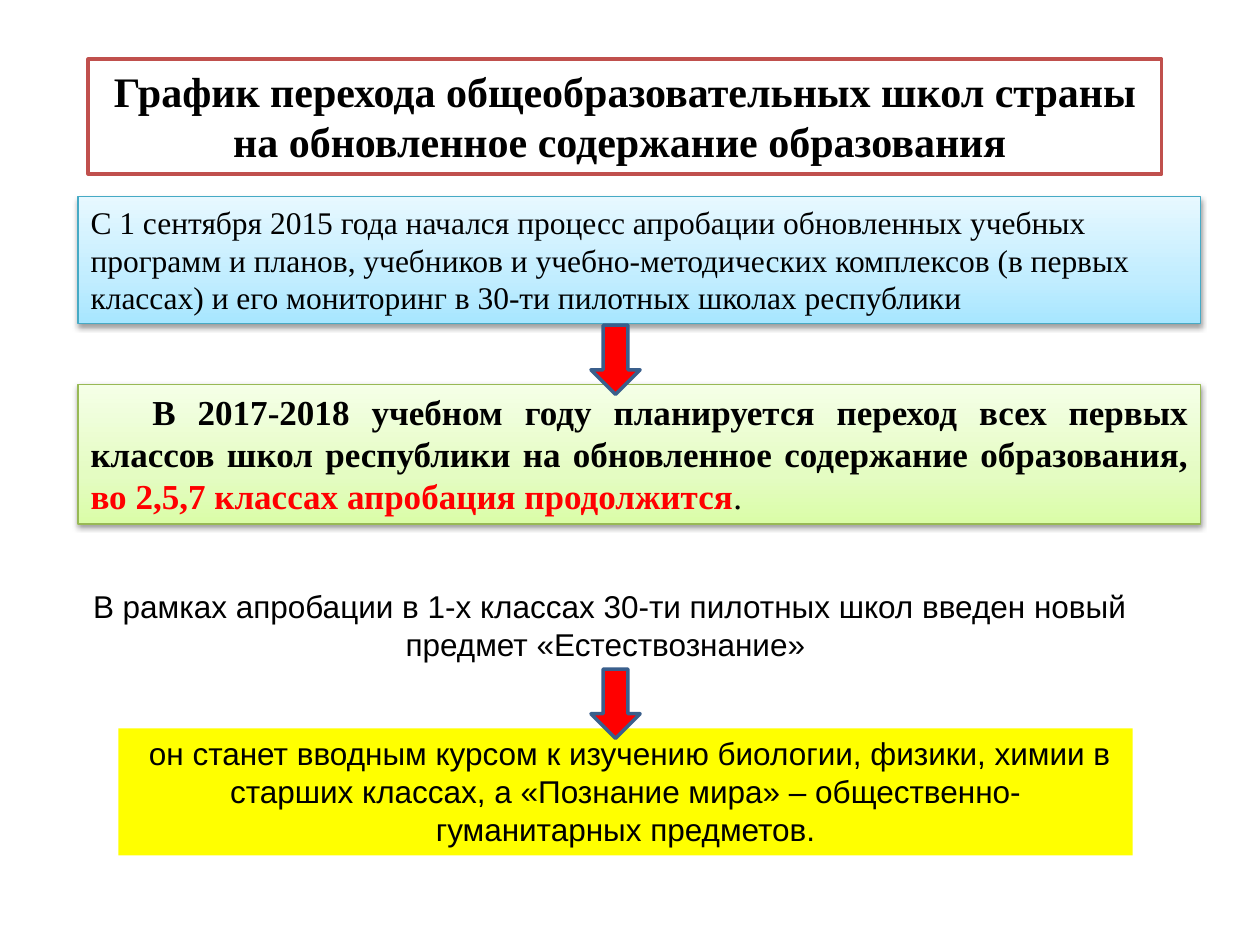
from copy import deepcopy

from pptx import Presentation
from pptx import util as u
from pptx.dml.color import RGBColor
from pptx.enum import shapes, text
from pptx.oxml import parse_xml
from pptx.oxml.ns import nsdecls, qn

BLACK = RGBColor(0x00, 0x00, 0x00)
WHITE = RGBColor(0xFF, 0xFF, 0xFF)
RED = RGBColor(0xFF, 0x00, 0x00)
YELLOW = RGBColor(0xFF, 0xFF, 0x00)
BRICK = RGBColor(0xC0, 0x50, 0x4D)
NAVY = RGBColor(0x3A, 0x5F, 0x8C)
AQUA = RGBColor(0x46, 0xAA, 0xC5)
OLIVE = RGBColor(0x98, 0xB9, 0x55)
BLUES = [RGBColor.from_string(c) for c in ("A7E6FF", "C1EDFF", "E7F8FF")]
GREENS = [RGBColor.from_string(c) for c in ("DAFDA7", "E4FCC2", "F5FFE7")]

SERIF = {"name": "Times New Roman", "size": u.Pt(18), "bold": False}
SANS = {**SERIF, "name": "Arial"}
HEAD = {**SERIF, "size": u.Pt(24), "bold": True}
STRONG = {**SERIF, "size": u.Pt(20), "bold": True}
FRAME = {"word_wrap": True, "auto_size": text.MSO_AUTO_SIZE.SHAPE_TO_FIT_TEXT,
         "vertical_anchor": text.MSO_ANCHOR.TOP}
LEFT, MID, JUST = text.PP_ALIGN.LEFT, text.PP_ALIGN.CENTER, text.PP_ALIGN.JUSTIFY

SHADOW = (f'<a:outerShdw {nsdecls("a")} blurRad="40000" dist="20000" dir="5400000" '
          'rotWithShape="0"><a:srgbClr val="000000"><a:alpha val="38000"/>'
          '</a:srgbClr></a:outerShdw>')


def apply(target, values):
    for key, value in values.items():
        setattr(target, key, value)


class Deck:
    def __init__(self):
        self.prs = Presentation()
        self.prs.slide_width, self.prs.slide_height = u.Inches(10), u.Inches(7.5)
        self.slide = self.prs.slides.add_slide(self.prs.slide_layouts[5])

    def paint(self, shape, fill, line=None, width=2):
        shape.fill.solid()
        shape.fill.fore_color.rgb = fill
        self.edge(shape, line, width)

    def edge(self, shape, line, width):
        if line is None:
            shape.line.fill.background()
        else:
            shape.line.color.rgb = line
            shape.line.width = u.Pt(width)

    def label(self, shape, runs, font, align=MID, indent=0):
        """Fill the shape with one paragraph of (wording, format) runs."""
        frame = shape.text_frame
        apply(frame, FRAME)
        para = frame.paragraphs[0]
        para.alignment = align
        if indent:
            para._p.get_or_add_pPr().set("indent", str(u.Inches(indent)))
        for words, extra in runs:
            look = {**font, **extra}
            tint = look.pop("color", BLACK)
            run = para.add_run()
            run.text = words
            apply(run.font, look)
            run.font.color.rgb = tint

    def shape(self, kind, at):
        item = self.slide.shapes.add_shape(kind, *map(u.Inches, at))
        item.shadow.inherit = False
        return item

    def title(self, at, words):
        item = self.slide.shapes.title
        apply(item, dict(zip(("left", "top", "width", "height"), map(u.Inches, at))))
        self.paint(item, WHITE, BRICK)
        self.label(item, [(words, {})], HEAD)

    def panel(self, at, fill, runs, font):
        item = self.shape(shapes.MSO_SHAPE.RECTANGLE, at)
        self.paint(item, fill)
        self.label(item, runs, font)

    def glow(self, at, tints, line, runs, font, **layout):
        """Add a panel with a three-stop gradient, rising, and a soft shadow."""
        item = self.shape(shapes.MSO_SHAPE.RECTANGLE, at)
        item.fill.gradient()
        item.fill.gradient_angle = 90
        props = item._element.spPr
        first = props.find(".//" + qn("a:gs"))
        first.addnext(deepcopy(first))
        for stop, tint, place in zip(item.fill.gradient_stops, tints, (0, 0.35, 1)):
            stop.color.rgb = tint
            stop.position = place
        self.edge(item, line, 0.75)
        props.find(qn("a:effectLst")).append(parse_xml(SHADOW))
        self.label(item, runs, font, **layout)

    def note(self, at, words):
        item = self.slide.shapes.add_textbox(*map(u.Inches, at))
        self.label(item, [(words, {})], SANS)

    def arrow(self, top):
        item = self.shape(shapes.MSO_SHAPE.DOWN_ARROW, (4.69, top, 0.39, 0.55))
        self.paint(item, RED, NAVY)


def main():
    deck = Deck()
    deck.title((0.7, 0.47, 8.52, 0.91),
               "График перехода общеобразовательных школ страны "
               "на обновленное содержание образования ")
    deck.glow((0.62, 1.56, 8.91, 1.01), BLUES, AQUA,
              [("С 1 сентября 2015 года начался процесс апробации обновленных учебных "
                "программ и планов, учебников и учебно-методических комплексов (в первых "
                "классах) и его мониторинг в 30-ти пилотных школах республики", {})],
              SERIF, align=LEFT)
    deck.glow((0.62, 3.05, 8.91, 1.11), GREENS, OLIVE,
              [("В 2017-2018 учебном году планируется переход всех первых классов школ "
                "республики на обновленное содержание образования, ", {}),
               ("во 2,5,7 классах апробация продолжится", {"color": RED}),
               (".", {"bold": False})],
              STRONG, align=JUST, indent=0.49)
    deck.note((0.62, 4.61, 8.44, 0.71),
              "В рамках апробации в 1-х классах 30-ти пилотных школ введен "
              "новый предмет «Естествознание» ")
    deck.panel((0.94, 5.78, 8.05, 1.01), YELLOW,
               [(" он станет вводным курсом к изучению биологии, физики, химии в старших "
                 "классах, а «Познание мира» – общественно-гуманитарных предметов.", {})],
               SANS)
    for top in (2.58, 5.31):
        deck.arrow(top)
    deck.prs.save("out.pptx")


if __name__ == "__main__":
    main()
